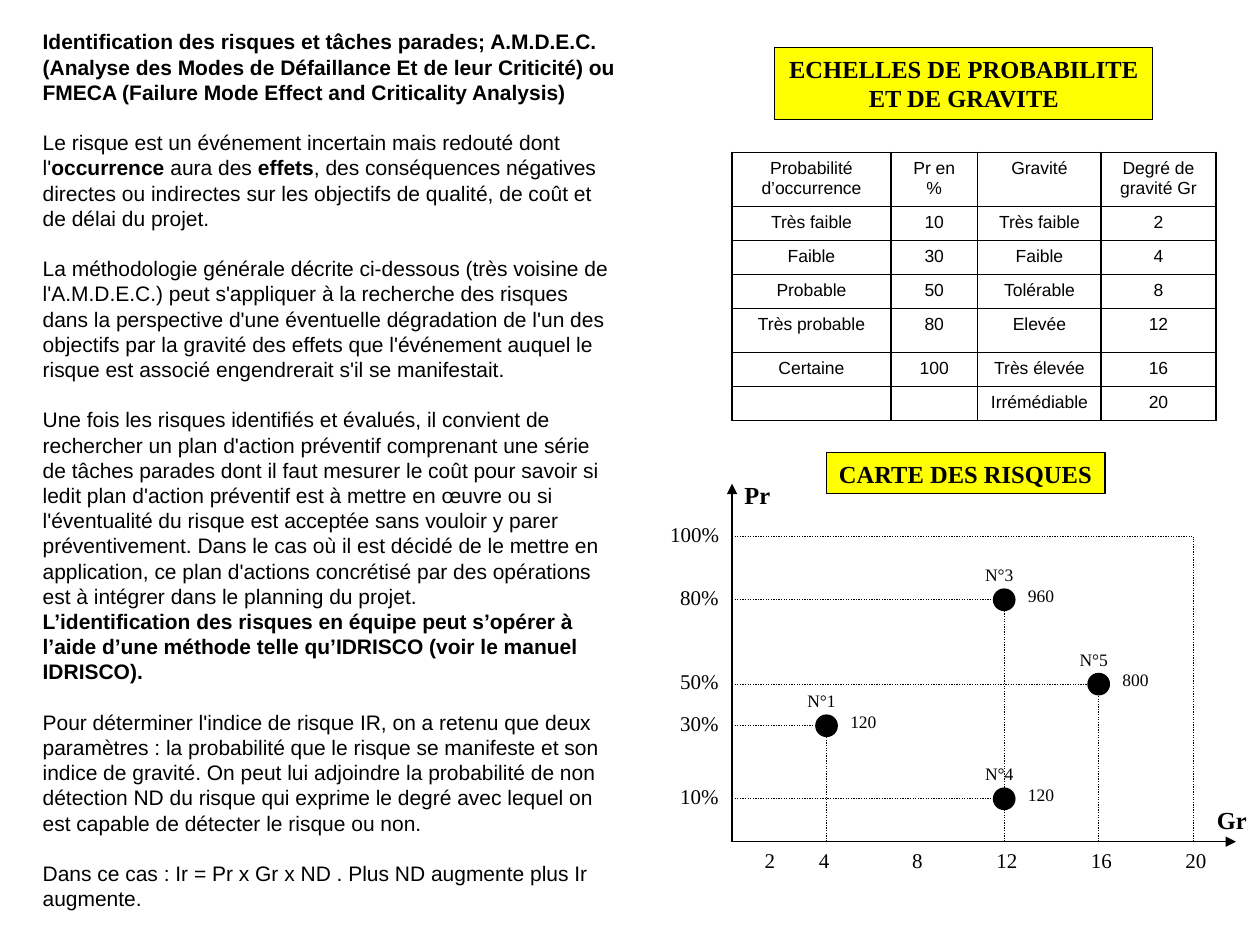
import lxml.etree
import pptx
import pptx.dml.color
import pptx.enum.dml
import pptx.enum.shapes
import pptx.enum.text
import pptx.oxml.ns
import pptx.util

Inches = pptx.util.Inches
Pt = pptx.util.Pt
qn = pptx.oxml.ns.qn
ALIGN = pptx.enum.text.PP_ALIGN
SHAPE = pptx.enum.shapes.MSO_SHAPE

BLACK = "000000"
YELLOW = "FFFF00"
SERIF = "Times New Roman"
SANS = "Arial"

AXIS_LEFT, AXIS_BASE = 5.81, 6.68
GRAVITY_X = {2: 6.13, 4: 6.56, 8: 7.3, 12: 7.97, 16: 8.72, 20: 9.47}
PROBABILITY_Y = {10: 6.34, 30: 5.76, 50: 5.43, 80: 4.76, 100: 4.26}
RISKS = [("N°1", 30, 4, "120"), ("N°3", 80, 12, "960"),
         ("N°4", 10, 12, "120"), ("N°5", 50, 16, "800")]
DOT = 0.17

SCALES = [
    ["Probabilité d’occurrence", "Pr en %", "Gravité", "Degré de gravité Gr"],
    ["Très faible", "10", "Très faible", "2"],
    ["Faible", "30", "Faible", "4"],
    ["Probable", "50", "Tolérable", "8"],
    ["Très probable", "80", "Elevée", "12"],
    ["Certaine", "100", "Très élevée", "16"],
    ["", "", "Irrémédiable", "20"],
]
COLUMN_WIDTHS = [1.26, 0.69, 0.98, 0.91]
ROW_HEIGHTS = [0.43, 0.27, 0.27, 0.27, 0.35, 0.27, 0.27]

# Each entry: space before in points, then (text, bold) spans.
BODY = [
    (0, [("Identification des risques et tâches parades; A.M.D.E.C.(Analyse des Modes de "
          "Défaillance Et de leur Criticité) ou FMECA (Failure Mode Effect and Criticality "
          "Analysis)", True)]),
    (14.4, [("Le risque est un événement incertain mais redouté dont l'", False),
            ("occurrence", True), (" aura des ", False), ("effets", True),
            (", des conséquences négatives directes ou indirectes sur les objectifs de "
             "qualité, de coût et de délai du projet.", False)]),
    (14.4, [("La méthodologie générale décrite ci-dessous (très voisine de l'A.M.D.E.C.) peut "
             "s'appliquer à la recherche des risques dans la perspective d'une éventuelle "
             "dégradation de l'un des objectifs par la gravité des effets que l'événement "
             "auquel le risque est associé engendrerait s'il se manifestait.", False)]),
    (14.4, [("Une fois les risques identifiés et évalués, il convient de rechercher un plan "
             "d'action préventif comprenant une série de tâches parades dont il faut mesurer "
             "le coût pour savoir si ledit plan d'action préventif est à mettre en œuvre ou "
             "si l'éventualité du risque est acceptée sans vouloir y parer préventivement. "
             "Dans le cas où il est décidé de le mettre en application, ce plan d'actions "
             "concrétisé par des opérations est à intégrer dans le planning du projet.",
             False)]),
    (0, [("L’identification des risques en équipe peut s’opérer à l’aide d’une méthode telle "
          "qu’IDRISCO (voir le manuel IDRISCO).", True)]),
    (14.4, [("Pour déterminer l'indice de risque IR, on a retenu que deux paramètres : la "
             "probabilité que le risque se manifeste et son indice de gravité. On peut lui "
             "adjoindre la probabilité de non détection ND du risque qui exprime le degré "
             "avec lequel on est capable de détecter le risque ou non.", False)]),
    (14.4, [("Dans ce cas : Ir = Pr x Gr x ND . Plus ND augmente plus Ir augmente.", False)]),
]


def color(value):
    return pptx.dml.color.RGBColor.from_string(value)


def set_font(para, name, size, bold=None):
    para.font.name = name
    para.font.size = Pt(size)
    para.font.bold = bold
    para.font.color.rgb = color(BLACK)


def fill_frame(frame, lines, size, bold, align):
    frame.word_wrap = False
    frame.auto_size = pptx.enum.text.MSO_AUTO_SIZE.SHAPE_TO_FIT_TEXT
    frame.vertical_anchor = pptx.enum.text.MSO_ANCHOR.TOP
    for index, line in enumerate(lines):
        para = frame.add_paragraph() if index else frame.paragraphs[0]
        para.text = line
        para.alignment = align
        set_font(para, SERIF, size, bold)


def add_label(slide, text, left, top, width, height, size, bold=False):
    box = slide.shapes.add_textbox(Inches(left), Inches(top), Inches(width), Inches(height))
    fill_frame(box.text_frame, [text], size, bold, ALIGN.LEFT)


def add_filled(slide, preset, left, top, width, height, fill):
    shape = slide.shapes.add_shape(
        preset, Inches(left), Inches(top), Inches(width), Inches(height))
    shape.shadow.inherit = False
    shape.fill.solid()
    shape.fill.fore_color.rgb = color(fill)
    shape.line.color.rgb = color(BLACK)
    shape.line.width = Pt(0.75)
    return shape


def add_banner(slide, lines, left, top, width, height, align):
    banner = add_filled(slide, SHAPE.RECTANGLE, left, top, width, height, YELLOW)
    fill_frame(banner.text_frame, lines, 14, True, align)


def add_line(slide, start, end, arrow=False):
    line = slide.shapes.add_connector(
        pptx.enum.shapes.MSO_CONNECTOR.STRAIGHT, *map(Inches, start + end))
    line.line.color.rgb = color(BLACK)
    line.line.width = Pt(0.75)
    if arrow:
        lxml.etree.SubElement(line.line._get_or_add_ln(), qn("a:tailEnd"), type="triangle")
    else:
        line.line.dash_style = pptx.enum.dml.MSO_LINE.ROUND_DOT
    lxml.etree.SubElement(line._element.spPr, qn("a:effectLst"))


def add_body(slide):
    box = slide.shapes.add_textbox(Inches(0.24), Inches(0.18), Inches(4.75), Inches(7.17))
    frame = box.text_frame
    frame.word_wrap = True
    for index, (space, spans) in enumerate(BODY):
        para = frame.add_paragraph() if index else frame.paragraphs[0]
        para.space_before = Pt(space)
        para.line_spacing = Pt(14.4)
        set_font(para, SANS, 12)
        for text, bold in spans:
            span = para.add_run()
            span.text = text
            span.font.bold = bold


def add_borders(cell):
    properties = cell._tc.get_or_add_tcPr()
    for side in ("a:lnL", "a:lnR", "a:lnT", "a:lnB"):
        border = lxml.etree.SubElement(properties, qn(side), w=str(Pt(1)))
        solid = lxml.etree.SubElement(border, qn("a:solidFill"))
        lxml.etree.SubElement(solid, qn("a:srgbClr"), val=BLACK)


def add_scales(slide):
    table = slide.shapes.add_table(
        len(SCALES), len(COLUMN_WIDTHS), Inches(5.81), Inches(1.21),
        Inches(sum(COLUMN_WIDTHS)), Inches(sum(ROW_HEIGHTS))).table
    table.first_row = table.horz_banding = False
    for column, width in zip(table.columns, COLUMN_WIDTHS):
        column.width = Inches(width)
    for row, height, texts in zip(table.rows, ROW_HEIGHTS, SCALES):
        row.height = Inches(height)
        for cell, text in zip(row.cells, texts):
            add_borders(cell)
            cell.fill.background()
            para = cell.text_frame.paragraphs[0]
            para.alignment = ALIGN.CENTER
            set_font(para, SANS, 10)
            if text:
                para.add_run().text = text
            else:
                lxml.etree.SubElement(para._p, qn("a:endParaRPr"), sz="1000")


def add_risk_map(slide):
    origin = (AXIS_LEFT, AXIS_BASE)
    add_line(slide, origin, (AXIS_LEFT, 3.84), arrow=True)
    add_line(slide, origin, (9.81, AXIS_BASE), arrow=True)
    for probability, y in PROBABILITY_Y.items():
        width = 0.59 if probability == 100 else 0.51
        add_label(slide, f"{probability}%", AXIS_LEFT - width, y - 0.17, width, 0.3, 12)
    for gravity, x in GRAVITY_X.items():
        width = 0.28 if gravity < 10 else 0.37
        add_label(slide, str(gravity), x - 0.16, AXIS_BASE, width, 0.3, 12)

    corners = [(100, 20)] + [risk[1:3] for risk in RISKS]
    for probability, gravity in corners:
        x, y = GRAVITY_X[gravity], PROBABILITY_Y[probability]
        add_line(slide, (AXIS_LEFT, y), (x, y))
    for gravity, probability in {g: max(p for p, other in corners if other == g)
                                 for _, g in corners}.items():
        x, y = GRAVITY_X[gravity], PROBABILITY_Y[probability]
        add_line(slide, (x, AXIS_BASE), (x, y))

    for name, probability, gravity, score in RISKS:
        x, y = GRAVITY_X[gravity], PROBABILITY_Y[probability]
        add_filled(slide, SHAPE.OVAL, x - DOT / 2, y - DOT / 2, DOT, DOT, BLACK)
        add_label(slide, name, x - 0.25, y - 0.33, 0.43, 0.27, 10)
        add_label(slide, score, x + 0.09, y - 0.17, 0.41, 0.27, 10)
    add_label(slide, "Pr", AXIS_LEFT, 3.76, 0.41, 0.33, 14, True)
    add_label(slide, "Gr", 9.56, 6.34, 0.44, 0.33, 14, True)


def main():
    deck = pptx.Presentation()
    deck.slide_width, deck.slide_height = Inches(10), Inches(7.5)
    page = deck.slides.add_slide(deck.slide_layouts[6])
    add_scales(page)
    add_risk_map(page)
    add_banner(page, ["CARTE DES RISQUES"], 6.56, 3.59, 2.21, 0.33, ALIGN.LEFT)
    add_body(page)
    add_banner(page, ["ECHELLES DE PROBABILITE", "ET DE GRAVITE"],
               6.15, 0.38, 3, 0.57, ALIGN.CENTER)
    deck.save("out.pptx")


if __name__ == "__main__":
    main()
